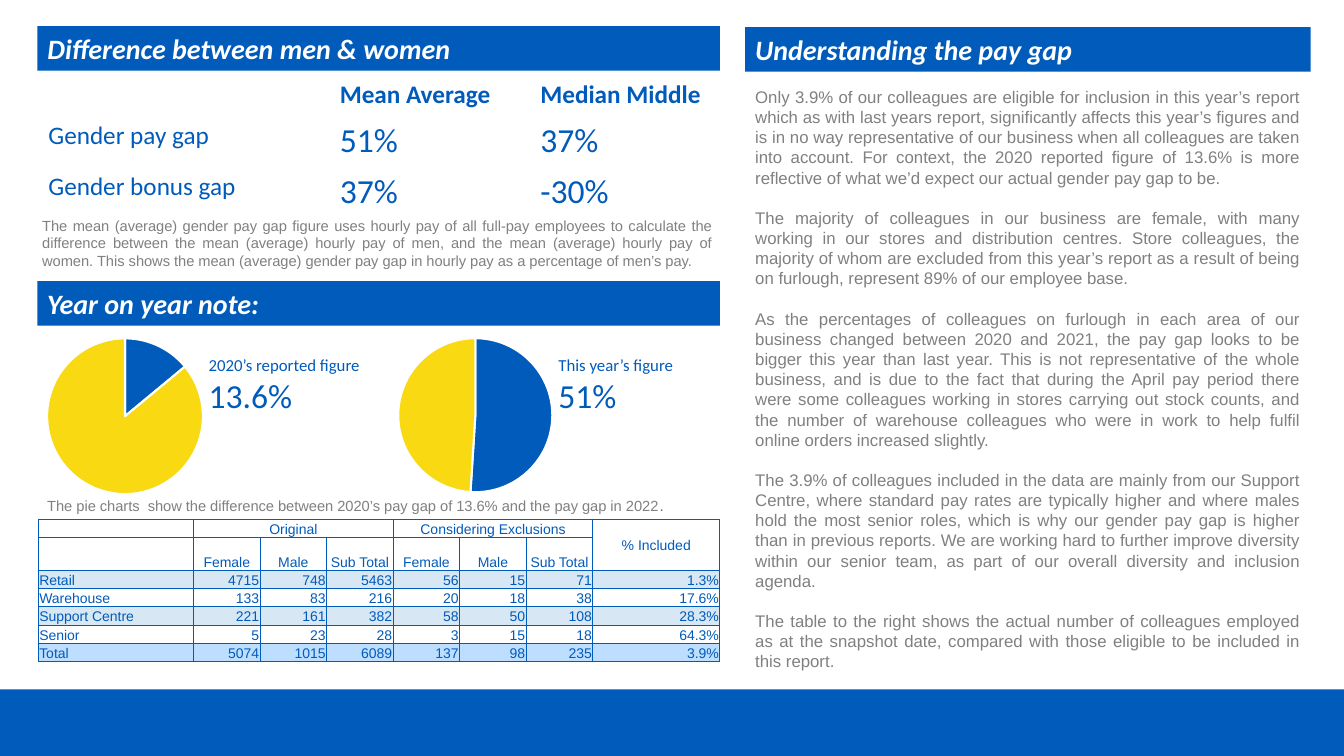
from dataclasses import dataclass

from lxml import etree
from pptx import Presentation
from pptx.chart import data as chart_data
from pptx.dml.color import RGBColor
from pptx.enum import chart as chart_enum, shapes, text
from pptx.oxml import ns
from pptx.util import Inches, Pt


@dataclass(frozen=True)
class Theme:
    """Colours, fonts and type sizes of the slide."""
    blue: str = "005BBB"
    yellow: str = "F9D911"
    white: str = "FFFFFF"
    grey: str = "808080"
    taupe: str = "766A65"
    pale_blue: str = "D7E7F4"
    total_blue: str = "BEDEFF"
    heading_font: str = "Calibri"
    body_font: str = "Arial"
    figure: float = 24
    heading: float = 20
    label: float = 18
    body: float = 12
    stop: float = 11
    note: float = 10.5
    table: float = 10
    leading: float = 1.2


THEME = Theme()
ALIGN = text.PP_ALIGN
ANCHOR = text.MSO_ANCHOR

EXPLANATION = [
    "Only 3.9% of our colleagues are eligible for inclusion in this year’s report which as with last years report, significantly affects this year’s figures and is in no way representative of our business when all colleagues are taken into account. For context, the 2020 reported figure of 13.6% is more reflective of what we’d expect our actual gender pay gap to be.",
    "The majority of colleagues in our business are female, with many working in our stores and distribution centres. Store colleagues, the majority of whom are excluded from this year’s report as a result of being on furlough, represent 89% of our employee base.",
    "As the percentages of colleagues on furlough in each area of our business changed between 2020 and 2021, the pay gap looks to be bigger this year than last year. This is not representative of the whole business, and is due to the fact that during the April pay period there were some colleagues working in stores carrying out stock counts, and the number of warehouse colleagues who were in work to help fulfil online orders increased slightly.",
    "The 3.9% of colleagues included in the data are mainly from our Support Centre, where standard pay rates are typically higher and where males hold the most senior roles, which is why our gender pay gap is higher than in previous reports. We are working hard to further improve diversity within our senior team, as part of our overall diversity and inclusion agenda.",
    "The table to the right shows the actual number of colleagues employed as at the snapshot date, compared with those eligible to be included in this report.",
]
MEAN_NOTE = "The mean (average) gender pay gap figure uses hourly pay of all full-pay employees to calculate the difference between the mean (average) hourly pay of men, and the mean (average) hourly pay of women. This shows the mean (average) gender pay gap in hourly pay as a percentage of men’s pay."
PIE_NOTE = "The pie charts  show the difference between 2020’s pay gap of 13.6% and the pay gap in 2022"
GAPS = [
    ["", "Mean Average", "Median Middle"],
    ["Gender pay gap", "51%", "37%"],
    ["Gender bonus gap", "37%", "-30%"],
]
HEADCOUNT = [
    ["", "Original", "", "", "Considering Exclusions", "", "", "% Included"],
    ["", *["Female", "Male", "Sub Total"] * 2, ""],
    ["Retail", "4715", "748", "5463", "56", "15", "71", "1.3%"],
    ["Warehouse", "133", "83", "216", "20", "18", "38", "17.6%"],
    ["Support Centre", "221", "161", "382", "58", "50", "108", "28.3%"],
    ["Senior", "5", "23", "28", "3", "15", "18", "64.3%"],
    ["Total", "5074", "1015", "6089", "137", "98", "235", "3.9%"],
]


def place(shape, box):
    """Move and size a shape to a box given in inches."""
    shape.left, shape.top, shape.width, shape.height = map(Inches, box)


def add_run(paragraph, words, size, color, font, bold=False, italic=False):
    """Add one formatted run to a paragraph."""
    run = paragraph.add_run()
    run.text = words
    run.font.size, run.font.name = Pt(size), font
    run.font.bold, run.font.italic = bold, italic
    run.font.color.rgb = RGBColor.from_string(color)


def prepare_frame(shape, anchor=ANCHOR.TOP):
    """Make a shape's text wrap at a fixed size and return its frame."""
    frame = shape.text_frame
    frame.word_wrap, frame.auto_size = True, text.MSO_AUTO_SIZE.NONE
    frame.vertical_anchor = anchor
    return frame


def fill_solid(shape, color):
    """Give a shape a plain fill without a line."""
    shape.fill.solid()
    shape.fill.fore_color.rgb = RGBColor.from_string(color)
    shape.line.fill.background()


def add_rectangle(slide, box):
    """Add a plain blue rectangle."""
    shape = slide.shapes.add_shape(shapes.MSO_SHAPE.RECTANGLE, *map(Inches, box))
    shape.shadow.inherit = False
    fill_solid(shape, THEME.blue)
    return shape


def format_heading(shape, words):
    """Write a white heading into a blue bar."""
    fill_solid(shape, THEME.blue)
    paragraph = prepare_frame(shape, ANCHOR.MIDDLE).paragraphs[0]
    paragraph.alignment = ALIGN.LEFT
    add_run(paragraph, words, THEME.heading, THEME.white, THEME.heading_font, True, True)


def add_textbox(slide, box):
    """Add a wrapping text box and return its frame."""
    return prepare_frame(slide.shapes.add_textbox(*map(Inches, box)))


def write_explanation(shape):
    """Fill the body placeholder with justified, unbulleted paragraphs."""
    frame = prepare_frame(shape)
    leading = Pt(THEME.body * THEME.leading)
    for index, words in enumerate(EXPLANATION):
        paragraph = frame.add_paragraph() if index else frame.paragraphs[0]
        properties = paragraph._p.get_or_add_pPr()
        properties.set("marL", "0")
        properties.set("indent", "0")
        etree.SubElement(properties, ns.qn("a:buNone"))
        paragraph.alignment, paragraph.line_spacing = ALIGN.JUSTIFY, leading
        paragraph.space_before = leading if index else Pt(0)
        add_run(paragraph, words, THEME.body, THEME.grey, THEME.body_font)


def add_figure(slide, box, label, value):
    """Add a small label with a large figure under it."""
    frame = add_textbox(slide, box)
    add_run(frame.paragraphs[0], label, THEME.body, THEME.blue, THEME.heading_font)
    add_run(frame.add_paragraph(), value, THEME.figure, THEME.blue, THEME.heading_font)


def add_pie(slide, box, values):
    """Add a two-slice pie centred in its box."""
    data = chart_data.CategoryChartData()
    data.categories = ["1", "2"]
    data.add_series("Series 1", values)
    chart = slide.shapes.add_chart(chart_enum.XL_CHART_TYPE.PIE, *map(Inches, box), data).chart
    chart.has_legend = chart.has_title = False
    chart.font.size, chart.font.name = Pt(THEME.table), THEME.body_font
    chart.font.color.rgb = RGBColor.from_string(THEME.taupe)
    plot = chart.plots[0]
    plot.vary_by_categories = True
    for index, color in enumerate((THEME.blue, THEME.yellow)):
        point = plot.series[0].points[index].format
        point.fill.solid()
        point.fill.fore_color.rgb = RGBColor.from_string(color)
        point.line.color.rgb = RGBColor.from_string(THEME.white)
        point.line.width = Pt(1.5)
    area = chart._chartSpace.chart.plotArea
    for old in area.findall(ns.qn("c:layout")):
        area.remove(old)
    layout = etree.Element(ns.qn("c:layout"))
    area.insert(0, layout)
    manual = etree.SubElement(layout, ns.qn("c:manualLayout"))
    high = 0.84
    wide = high * box[3] / box[2]
    settings = {"layoutTarget": "inner", "xMode": "edge", "yMode": "edge",
                "x": (1 - wide) / 2, "y": (1 - high) / 2, "w": wide, "h": high}
    for name, value in settings.items():
        etree.SubElement(manual, ns.qn(f"c:{name}"), val=str(value))


def set_borders(cell, color, widths):
    """Draw the left, right, top and bottom borders of a cell."""
    properties = cell._tc.get_or_add_tcPr()
    for side, width in zip("LRTB", widths):
        line = etree.SubElement(properties, ns.qn(f"a:ln{side}"), w=str(Pt(width)))
        fill = etree.SubElement(line, ns.qn("a:solidFill"))
        etree.SubElement(fill, ns.qn("a:srgbClr"), val=color)


def add_table(slide, box, columns, rows):
    """Add an unstyled table with the given column widths and row heights."""
    table = slide.shapes.add_table(len(rows), len(columns), *map(Inches, box)).table
    table.first_row = table.horz_banding = False
    for column, width in zip(table.columns, columns):
        column.width = Inches(width)
    for row, height in zip(table.rows, rows):
        row.height = Inches(height)
    return table


def add_gap_table(slide):
    """Add the table of mean and median gaps."""
    table = add_table(slide, (0.38, 0.74, 6.77, 1.4), [2.89, 1.99, 1.9], [0.4, 0.5, 0.5])
    for r, row in enumerate(GAPS):
        for c, words in enumerate(row):
            cell = table.cell(r, c)
            set_borders(cell, THEME.white, (1, 1, 3 if r == 1 else 1, 1 if r else 3))
            cell.fill.background()
            cell.vertical_anchor = ANCHOR.TOP if r else ANCHOR.MIDDLE
            if words:
                size = THEME.figure if r and c else THEME.label
                add_run(cell.text_frame.paragraphs[0], words, size, THEME.blue, THEME.heading_font, r == 0)


def add_headcount_table(slide):
    """Add the table of colleagues by area."""
    table = add_table(slide, (0.38, 5.15, 6.76, 1.41), [1.54, *[0.66] * 6, 1.26], [0.18, 0.33, *[0.18] * 5])
    fills = {2: THEME.pale_blue, 4: THEME.pale_blue, 6: THEME.total_blue}
    for r, row in enumerate(HEADCOUNT):
        for c, words in enumerate(row):
            cell = table.cell(r, c)
            set_borders(cell, THEME.blue, [0.5] * 4)
            cell.fill.background()
            if r in fills:
                cell.fill.solid()
                cell.fill.fore_color.rgb = RGBColor.from_string(fills[r])
            cell.margin_left = cell.margin_right = cell.margin_top = Inches(0.01)
            cell.margin_bottom = 0
            cell.vertical_anchor = ANCHOR.MIDDLE if words == "% Included" else ANCHOR.BOTTOM
            paragraph = cell.text_frame.paragraphs[0]
            paragraph.alignment = ALIGN.CENTER if r < 2 else ALIGN.RIGHT if c else ALIGN.LEFT
            if words:
                add_run(paragraph, words, THEME.table, THEME.blue, THEME.body_font)
            else:
                etree.SubElement(paragraph._p, ns.qn("a:endParaRPr"), sz=str(int(THEME.table * 100)))
    for first, last in (((0, 1), (0, 3)), ((0, 4), (0, 6)), ((0, 7), (1, 7))):
        table.cell(*first).merge(table.cell(*last))


def main():
    """Build the pay gap slide."""
    presentation = Presentation()
    presentation.slide_width, presentation.slide_height = Inches(13.33), Inches(7.5)
    slide = presentation.slides.add_slide(presentation.slide_layouts[1])
    title, body = slide.placeholders
    place(title, (0.37, 0.26, 6.77, 0.44))
    format_heading(title, "Difference between men & women")
    place(body, (7.39, 0.81, 5.61, 6.16))
    write_explanation(body)
    add_rectangle(slide, (-0.05, 6.84, 13.44, 0.68))
    format_heading(add_rectangle(slide, (7.39, 0.27, 5.61, 0.44)), "Understanding the pay gap")
    format_heading(add_rectangle(slide, (0.37, 2.79, 6.77, 0.44)), "Year on year note:")
    add_gap_table(slide)
    add_pie(slide, (0.29, 3.21, 1.9, 1.84), (14, 86))
    add_pie(slide, (3.58, 3.21, 2.27, 1.82), (51, 49))
    add_figure(slide, (1.97, 3.47, 1.92, 0.71), "2020’s reported figure", "13.6%")
    add_figure(slide, (5.44, 3.47, 1.57, 0.71), "This year’s figure", "51%")
    add_headcount_table(slide)
    mean_note = add_textbox(slide, (0.32, 2.1, 6.85, 0.63)).paragraphs[0]
    mean_note.alignment = ALIGN.JUSTIFY
    mean_note.line_spacing = Pt(THEME.note * THEME.leading)
    add_run(mean_note, MEAN_NOTE, THEME.note, THEME.grey, THEME.body_font)
    pie_note = add_textbox(slide, (0.37, 4.87, 6.85, 0.29)).paragraphs[0]
    add_run(pie_note, PIE_NOTE, THEME.note, THEME.grey, THEME.body_font)
    add_run(pie_note, ".", THEME.stop, THEME.taupe, THEME.body_font)
    presentation.save("out.pptx")


if __name__ == "__main__":
    main()
